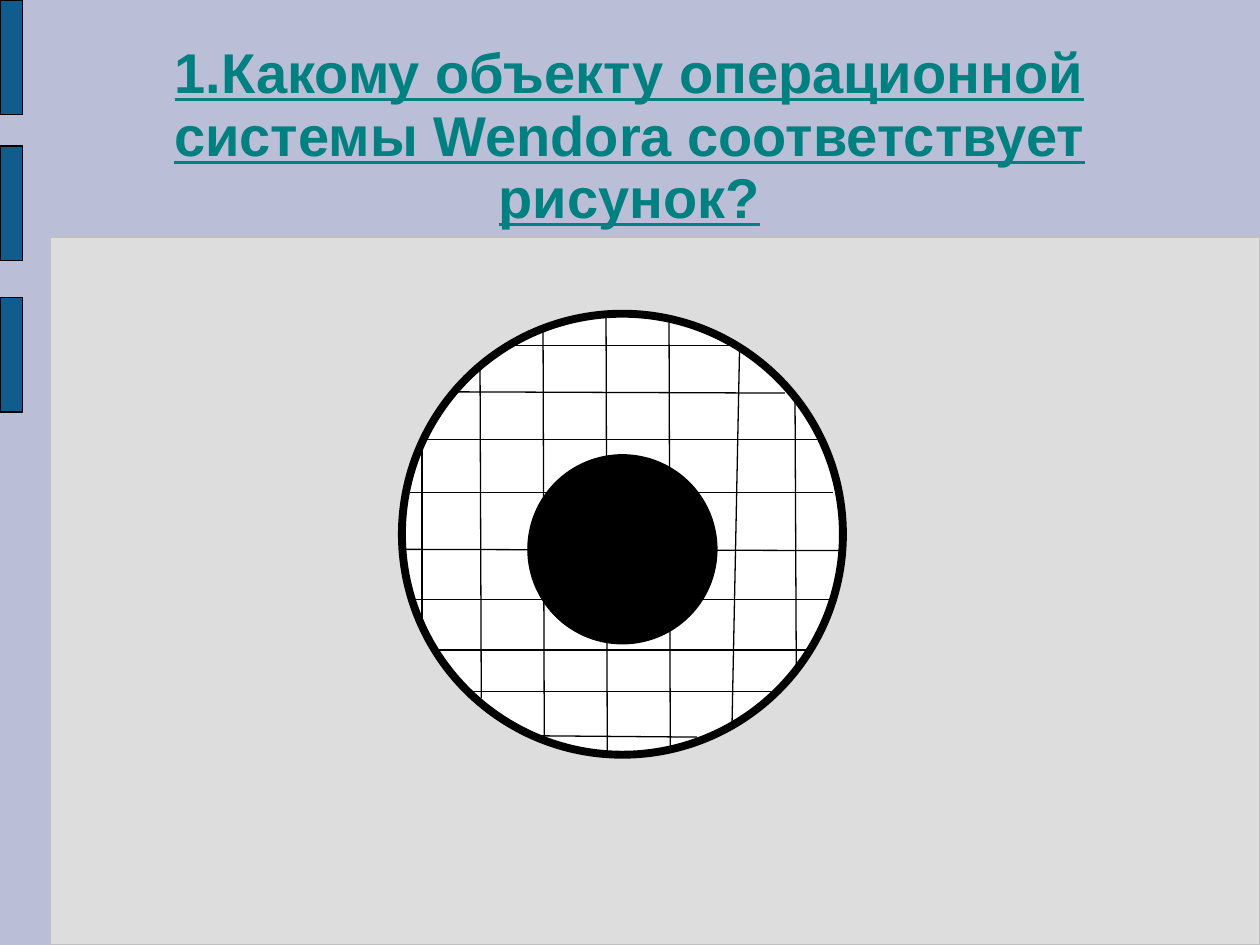
from typing import NamedTuple

from lxml import etree
from pptx import Presentation
from pptx.dml.color import RGBColor
from pptx.enum.shapes import MSO_CONNECTOR, MSO_SHAPE
from pptx.enum.text import MSO_ANCHOR, PP_ALIGN
from pptx.oxml.ns import qn
from pptx.util import Inches, Pt

ROUND = MSO_SHAPE.ROUNDED_RECTANGLE
OVAL = MSO_SHAPE.OVAL
STRAIGHT = MSO_CONNECTOR.STRAIGHT
MIDDLE = MSO_ANCHOR.MIDDLE
CENTER = PP_ALIGN.CENTER
BLACK = "000000"
TITLE = "1.Какому объекту операционной системы Wendora соответствует рисунок?"


class Box(NamedTuple):
    left: float
    top: float
    width: float
    height: float


class Line(NamedTuple):
    x1: float
    y1: float
    x2: float
    y2: float


PANEL = Box(0.4, 1.88, 9.6, 5.62)
BARS = [Box(0, top, 0.18, 0.91) for top in (0, 1.16, 2.36)]
HEAD = Box(0.27, 0.24, 9.45, 1.7)
RING = Box(3.19, 2.49, 3.5, 3.5)
PUPIL = Box(4.19, 3.61, 1.5, 1.5)
ROWS = [
    Line(4.06, 2.74, 5.81, 2.74),
    Line(3.61, 3.11, 6.23, 3.12),
    Line(3.37, 3.49, 6.49, 3.49),
    Line(3.23, 3.91, 6.61, 3.91),
    Line(3.19, 4.36, 6.69, 4.37),
    Line(3.26, 4.76, 6.64, 4.76),
    Line(3.44, 5.16, 6.44, 5.16),
    Line(3.74, 5.49, 6.12, 5.49),
    Line(4.28, 5.84, 5.53, 5.85),
]
COLUMNS = [
    Line(3.35, 3.57, 3.35, 4.95),
    Line(3.81, 2.92, 3.82, 5.54),
    Line(4.31, 2.61, 4.32, 5.86),
    Line(4.81, 2.49, 4.82, 5.99),
    Line(5.31, 2.56, 5.32, 5.94),
    Line(5.87, 2.76, 5.81, 5.74),
    Line(6.31, 3.19, 6.32, 5.31),
]


def color(code: str) -> RGBColor:
    return RGBColor.from_string(code)


def add_box(shapes, kind, box: Box, fill: str, edge: str = BLACK, width: float = 0.75):
    shape = shapes.add_shape(kind, *map(Inches, box))
    shape.shadow.inherit = False
    shape.fill.solid()
    shape.fill.fore_color.rgb = color(fill)
    shape.line.color.rgb = color(edge)
    shape.line.width = Pt(width)
    if kind == ROUND:
        shape.adjustments[0] = 0
    return shape


def add_line(shapes, line: Line) -> None:
    link = shapes.add_connector(STRAIGHT, *map(Inches, line))
    link.line.color.rgb = color(BLACK)
    link.line.width = Pt(0.75)
    etree.SubElement(link.line._get_or_add_ln().getparent(), qn("a:effectLst"))


def add_title(shapes, box: Box, text: str) -> None:
    frame = shapes.add_textbox(*map(Inches, box)).text_frame
    frame.word_wrap = True
    frame.vertical_anchor = MIDDLE
    para = frame.paragraphs[0]
    para.alignment = CENTER
    para.line_spacing = 0.93
    run = para.add_run()
    run.text = text
    font = run.font
    font.name = "Arial"
    font.size = Pt(32)
    font.bold = font.underline = True
    font.color.rgb = color("008080")


def add_eye(shapes) -> None:
    group = shapes.add_group_shape().shapes
    add_box(group, OVAL, RING, "FFFFFF", width=4.5)
    for line in ROWS + COLUMNS:
        add_line(group, line)
    add_box(group, OVAL, PUPIL, BLACK)


def main() -> None:
    """Build the quiz slide with a gridded eye below its question."""
    deck = Presentation()
    deck.slide_width, deck.slide_height = Inches(10), Inches(7.5)
    slide = deck.slides.add_slide(deck.slide_layouts[6])
    slide.background.fill.solid()
    slide.background.fill.fore_color.rgb = color("BABED6")
    add_box(slide.shapes, ROUND, PANEL, "DDDDDD", "C0C0C0")
    for bar in BARS:
        add_box(slide.shapes, ROUND, bar, "125C8D")
    add_title(slide.shapes, HEAD, TITLE)
    add_eye(slide.shapes)
    deck.save("out.pptx")


if __name__ == "__main__":
    main()
